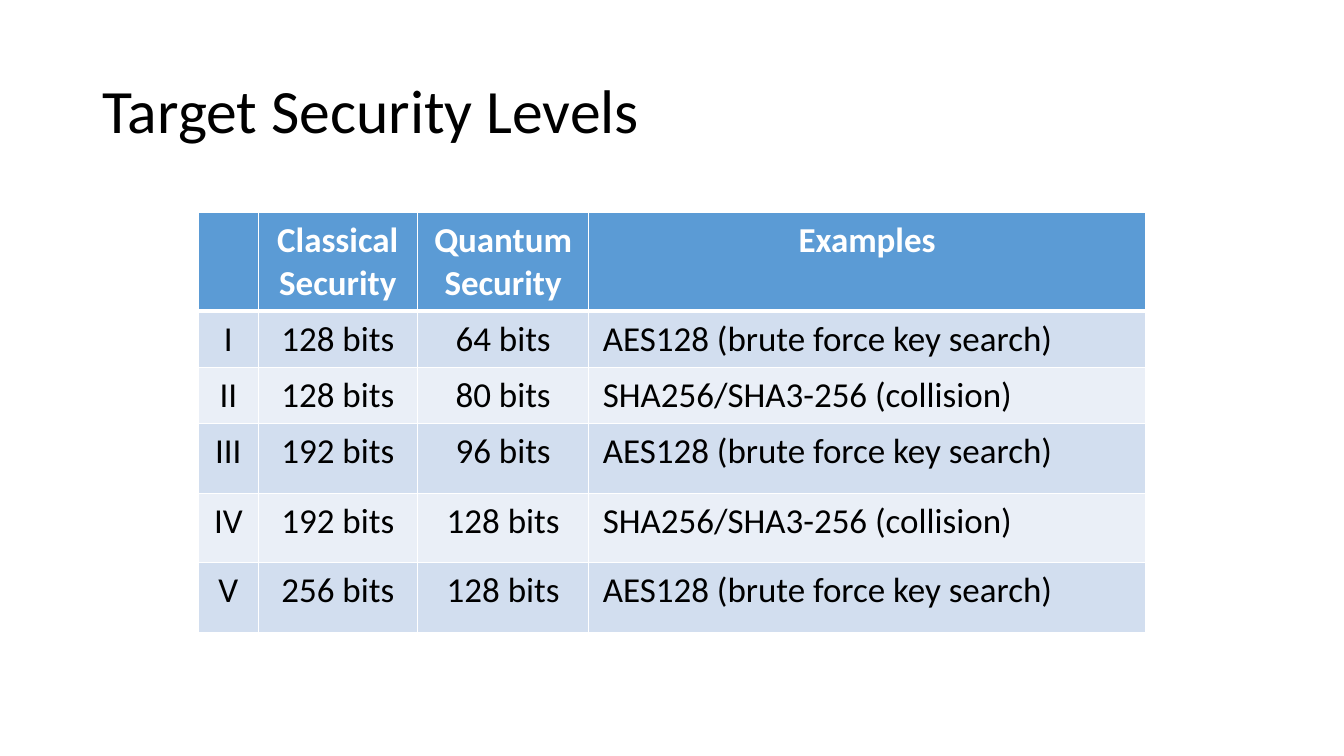
from lxml.etree import SubElement
from pptx import Presentation
from pptx.dml.color import RGBColor
from pptx.enum.text import MSO_ANCHOR as Anchor, PP_ALIGN as Align
from pptx.oxml.ns import qn
from pptx.util import Inches, Pt

BLACK = RGBColor(0x00, 0x00, 0x00)
WHITE = RGBColor(0xFF, 0xFF, 0xFF)
HEADER_BLUE = RGBColor(0x5B, 0x9B, 0xD5)
BAND_DARK = RGBColor(0xD2, 0xDE, 0xEF)
BAND_LIGHT = RGBColor(0xEA, 0xEF, 0xF7)

AES = "AES128 (brute force key search)"
SHA = "SHA256/SHA3-256 (collision)"
LEVELS = [
    ("", "Classical Security", "Quantum Security", "Examples"),
    ("I", "128 bits", "64 bits", AES),
    ("II", "128 bits", "80 bits", SHA),
    ("III", "192 bits", "96 bits", AES),
    ("IV", "192 bits", "128 bits", SHA),
    ("V", "256 bits", "128 bits", AES),
]
COLUMN_WIDTHS = [0.59, 1.58, 1.7, 5.52]
ROW_HEIGHTS = [0.97, 0.56, 0.56, 0.69, 0.69, 0.69]


class SlideBuilder:
    font = "Calibri"
    title_size = 44
    table_size = 25

    def __init__(self, page):
        self.page = page

    def style_text(self, frame, text, size, color, bold=False, align=Align.LEFT):
        frame.text = text
        para = frame.paragraphs[0]
        para.alignment = align
        for span in para.runs:
            span.font.name = self.font
            span.font.size = Pt(size)
            span.font.bold = bold
            span.font.color.rgb = color
        return para

    def title(self, text, left, top, width, height):
        box = self.page.shapes.add_textbox(
            Inches(left), Inches(top), Inches(width), Inches(height))
        frame = box.text_frame
        frame.word_wrap = True
        frame.vertical_anchor = Anchor.MIDDLE
        para = self.style_text(frame, text, self.title_size, BLACK)
        para.line_spacing = 0.9

    def borders(self, cell, **widths):
        properties = cell._tc.get_or_add_tcPr()
        for side, width in widths.items():
            line = SubElement(properties, qn(f"a:ln{side}"), w=str(Pt(width)))
            fill = SubElement(line, qn("a:solidFill"))
            SubElement(fill, qn("a:srgbClr"), val=str(WHITE))

    def table(self, rows, widths, heights, left, top):
        grid = self.page.shapes.add_table(
            len(rows), len(widths), Inches(left), Inches(top),
            Inches(sum(widths)), Inches(sum(heights))).table
        for column, width in zip(grid.columns, widths):
            column.width = Inches(width)
        for row, height in zip(grid.rows, heights):
            row.height = Inches(height)
        for row_index, texts in enumerate(rows):
            for column_index, text in enumerate(texts):
                self.cell(grid.cell(row_index, column_index), text,
                          row_index, column_index == len(widths) - 1)

    def cell(self, cell, text, row_index, is_last_column):
        is_header = row_index == 0
        # Borders come before the fill in the cell properties
        self.borders(cell, L=1, R=1, T=3 if row_index == 1 else 1,
                     B=3 if is_header else 1)
        cell.fill.solid()
        band = BAND_DARK if row_index % 2 else BAND_LIGHT
        cell.fill.fore_color.rgb = HEADER_BLUE if is_header else band
        cell.margin_left = cell.margin_right = Inches(0.14)
        cell.margin_top = cell.margin_bottom = Inches(0.07)
        left_aligned = is_last_column and not is_header
        self.style_text(cell.text_frame, text, self.table_size,
                        WHITE if is_header else BLACK, is_header,
                        Align.LEFT if left_aligned else Align.CENTER)


def main():
    deck = Presentation()
    deck.slide_width, deck.slide_height = Inches(13.33), Inches(7.5)
    builder = SlideBuilder(deck.slides.add_slide(deck.slide_layouts[6]))

    # Heading
    builder.title("Target Security Levels", 0.92, 0.4, 11.5, 1.45)

    # Security levels with their examples
    builder.table(LEVELS, COLUMN_WIDTHS, ROW_HEIGHTS, 1.97, 2.11)

    deck.save("out.pptx")


if __name__ == "__main__":
    main()
